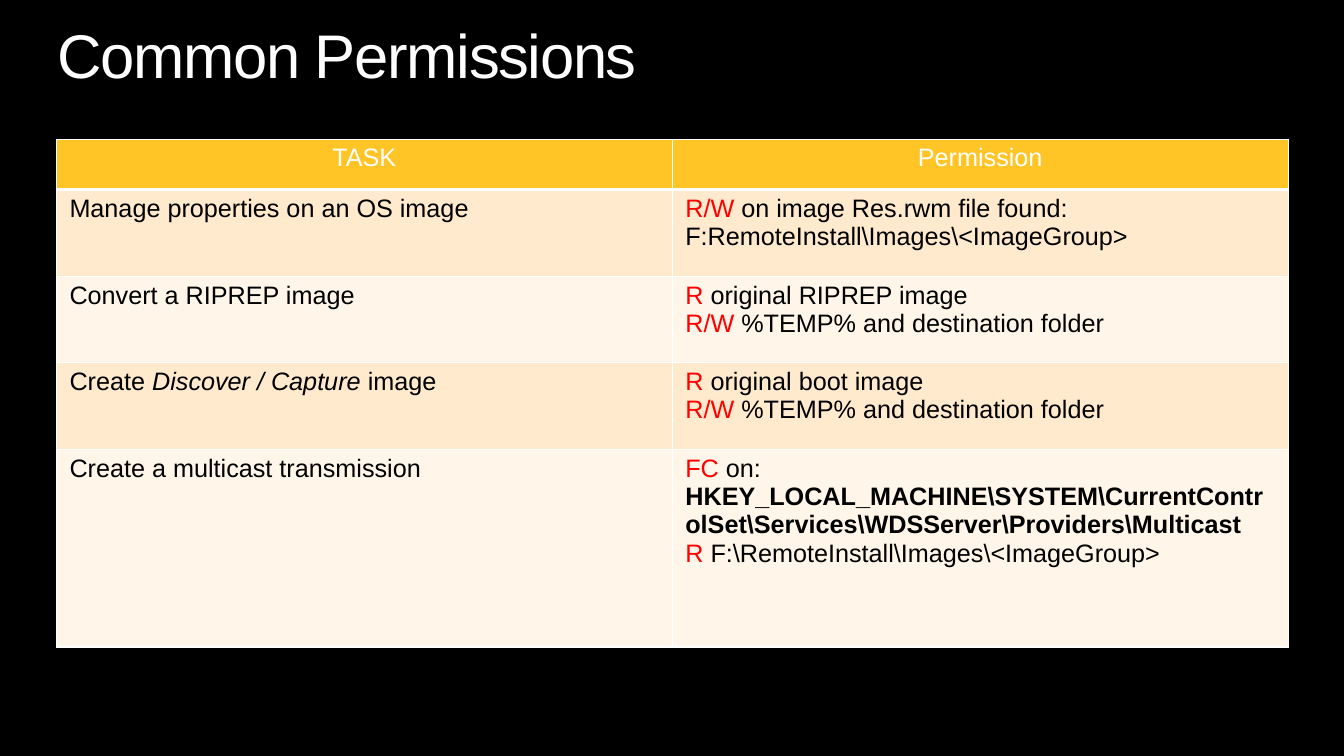
from lxml import etree
from pptx import Presentation
from pptx.dml.color import RGBColor
from pptx.enum.text import MSO_ANCHOR, PP_ALIGN
from pptx.oxml.ns import qn
from pptx.util import Pt

PX = 9144  # EMU in one px, 100 px to the inch
LEFT, MID = PP_ALIGN.LEFT, PP_ALIGN.CENTER
TOP = MSO_ANCHOR.TOP
FONT = "Arial"
WHITE, BLACK, RED, GOLD = "FFFFFF", "000000", "FF0000", "FFC425"
BANDS = ["FFEACD", "FFF5E8"]

COLS = [611, 611]
ROWS = [50, 86, 86, 86, 196]
HEADS = ["TASK", "Permission"]
TEMP = [("R/W", {"color": RED}), " %TEMP% and destination folder"]
KEY = (r"HKEY_LOCAL_MACHINE\SYSTEM\CurrentControlSet"
       r"\Services\WDSServer\Providers\Multicast")

# Each row: paragraphs of the task, paragraphs of the permission
TASKS = [
    ([["Manage properties on an OS image"]],
     [[("R/W", {"color": RED}), " on image Res.rwm file found:"],
      [r"F:RemoteInstall\Images\<ImageGroup>"]]),
    ([["Convert a RIPREP image"]],
     [[("R", {"color": RED}), " original RIPREP image"], TEMP]),
    ([["Create ", ("Discover / Capture", {"italic": True}), " image"]],
     [[("R", {"color": RED}), " original boot image"], TEMP]),
    ([["Create a multicast transmission"]],
     [[("FC", {"color": RED}), " on: ", (KEY, {"bold": True})],
      [("R", {"color": RED}), r" F:\RemoteInstall\Images\<ImageGroup>"]]),
]


def px(num):
    return round(num * PX)


def rgb(code):
    return RGBColor.from_string(code)


def add_run(para, text, size=18, color=BLACK, bold=False, italic=False,
            track=0):
    run = para.add_run()
    run.text = text
    font = run.font
    font.name, font.size = FONT, Pt(size)
    font.bold, font.italic = bold, italic
    font.color.rgb = rgb(color)
    if track:
        run._r.get_or_add_rPr().set("spc", str(track * 100))


def write(frame, paras, align=LEFT, space=1.0, **base):
    """Fill a frame; a run is plain text or a pair of text and format."""
    frame.word_wrap = True
    for i, runs in enumerate(paras):
        para = frame.add_paragraph() if i else frame.paragraphs[0]
        para.alignment, para.line_spacing = align, space
        for run in runs:
            text, own = (run, {}) if isinstance(run, str) else run
            add_run(para, text, **{**base, **own})


def add_title(slide, text):
    box = slide.shapes.add_textbox(px(57), px(25), px(1219), px(67))
    frame = box.text_frame
    frame.margin_left = frame.margin_right = 0
    frame.margin_top = frame.margin_bottom = 0
    frame.vertical_anchor = TOP
    write(frame, [[text]], space=0.9, size=44, color=WHITE, track=-1)


def add_edge(cell, side, width):
    props = cell._tc.get_or_add_tcPr()
    line = etree.SubElement(props, qn("a:ln" + side), w=str(Pt(width)))
    fill = etree.SubElement(line, qn("a:solidFill"))
    etree.SubElement(fill, qn("a:srgbClr"), val=WHITE)


def set_cell(cell, paras, fill, base=1, **form):
    cell.margin_left = cell.margin_right = px(13)
    cell.margin_top = cell.margin_bottom = px(5)
    cell.vertical_anchor = TOP
    for side in "LRT":
        add_edge(cell, side, 1)
    add_edge(cell, "B", base)
    cell.fill.solid()
    cell.fill.fore_color.rgb = rgb(fill)
    write(cell.text_frame, paras, **form)


def add_grid(slide):
    grid = slide.shapes.add_table(len(ROWS), len(COLS), px(56), px(138),
                                  px(sum(COLS)), px(sum(ROWS))).table
    for col, width in zip(grid.columns, COLS):
        col.width = px(width)
    for row, height in zip(grid.rows, ROWS):
        row.height = px(height)
    # Header
    for c, head in enumerate(HEADS):
        set_cell(grid.cell(0, c), [[head]], GOLD, base=3,
                 align=MID, color=WHITE)
    # Body in two bands
    for r, task in enumerate(TASKS):
        for c, paras in enumerate(task):
            set_cell(grid.cell(r + 1, c), paras, BANDS[r % 2])


def main():
    deck = Presentation()
    deck.slide_width, deck.slide_height = px(1333.33), px(750)
    slide = deck.slides.add_slide(deck.slide_layouts[6])
    back = slide.background.fill
    back.solid()
    back.fore_color.rgb = rgb(BLACK)
    add_title(slide, "Common Permissions")
    add_grid(slide)
    deck.save("out.pptx")


if __name__ == "__main__":
    main()
